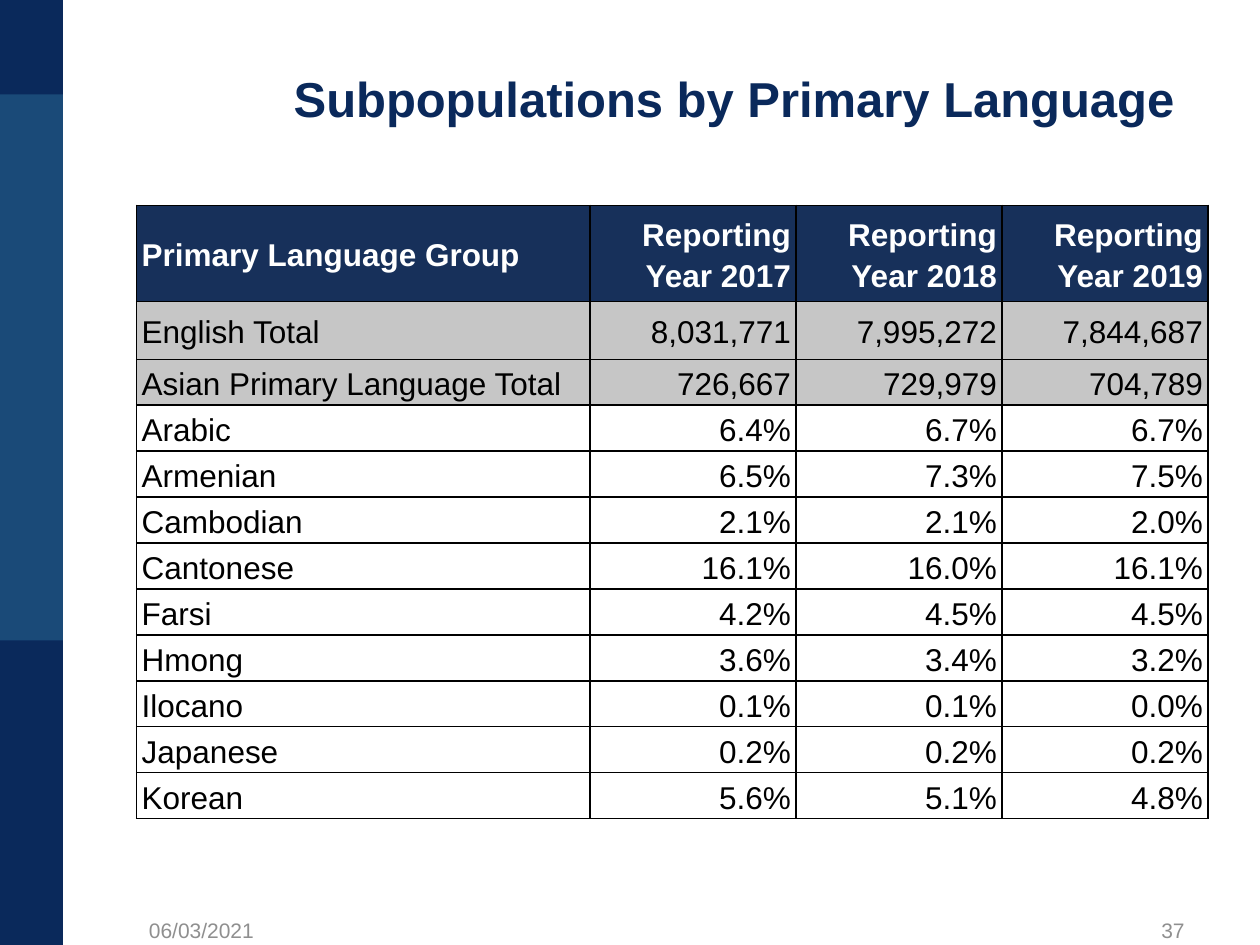
from dataclasses import dataclass

from lxml import etree
from pptx import Presentation
from pptx.dml.color import RGBColor
from pptx.enum.shapes import MSO_SHAPE
from pptx.enum.text import MSO_ANCHOR, MSO_AUTO_SIZE, PP_ALIGN
from pptx.oxml.ns import qn
from pptx.util import Pt

RECT = MSO_SHAPE.RECTANGLE
MIDDLE = MSO_ANCHOR.MIDDLE
NO_AUTOFIT = MSO_AUTO_SIZE.NONE
LEFT, CENTER, RIGHT = PP_ALIGN.LEFT, PP_ALIGN.CENTER, PP_ALIGN.RIGHT

NAVY = RGBColor(0x0A, 0x29, 0x5B)
BLUE = RGBColor(0x1A, 0x4A, 0x78)
HEADER_NAVY = RGBColor(0x17, 0x30, 0x5A)
TOTAL_GREY = RGBColor(0xC6, 0xC6, 0xC6)
FOOTER_GREY = RGBColor(0x8F, 0x8F, 0x8F)
WHITE = RGBColor(0xFF, 0xFF, 0xFF)
BLACK = RGBColor(0, 0, 0)


@dataclass
class Band:
    top: float
    height: float
    color: RGBColor


@dataclass
class Footer:
    text: str
    left: float
    align: PP_ALIGN


@dataclass
class RowStyle:
    height: float
    fill: RGBColor
    color: RGBColor = BLACK
    bold: bool = False


HEADER = RowStyle(54.8, HEADER_NAVY, WHITE, True)
ENGLISH = RowStyle(33.1, TOTAL_GREY)
TOTAL = RowStyle(26.25, TOTAL_GREY)
LANGUAGE = RowStyle(26.25, WHITE)

BAND_WIDTH = 36
BANDS = [Band(0, 540, BLUE), Band(0, 54, NAVY), Band(366, 174, NAVY)]
FOOTERS = [Footer("06/03/2021", 78, LEFT), Footer("37", 516, RIGHT)]

COLUMN_WIDTHS = [259.2] + [117.7] * 3
ROWS = [
    (HEADER, ["Primary Language Group"]
     + [f"Reporting Year {year}" for year in (2017, 2018, 2019)]),
    (ENGLISH, ["English Total", "8,031,771", "7,995,272", "7,844,687"]),
    (TOTAL, ["Asian Primary Language Total", "726,667", "729,979", "704,789"]),
    (LANGUAGE, ["Arabic", "6.4%", "6.7%", "6.7%"]),
    (LANGUAGE, ["Armenian", "6.5%", "7.3%", "7.5%"]),
    (LANGUAGE, ["Cambodian", "2.1%", "2.1%", "2.0%"]),
    (LANGUAGE, ["Cantonese", "16.1%", "16.0%", "16.1%"]),
    (LANGUAGE, ["Farsi", "4.2%", "4.5%", "4.5%"]),
    (LANGUAGE, ["Hmong", "3.6%", "3.4%", "3.2%"]),
    (LANGUAGE, ["Ilocano", "0.1%", "0.1%", "0.0%"]),
    (LANGUAGE, ["Japanese", "0.2%", "0.2%", "0.2%"]),
    (LANGUAGE, ["Korean", "5.6%", "5.1%", "4.8%"]),
]


def set_attributes(target, values: dict) -> None:
    for name, value in values.items():
        setattr(target, name, value)


def write_text(tf, text: str, size: float, color: RGBColor,
               align: PP_ALIGN, bold: bool = False) -> None:
    p = tf.paragraphs[0]
    p.alignment = align
    r = p.add_run()
    r.text = text
    set_attributes(r.font, {"name": "Arial", "size": Pt(size), "bold": bold})
    r.font.color.rgb = color


def add_band(s, band: Band) -> None:
    sp = s.shapes.add_shape(RECT, 0, Pt(band.top), Pt(BAND_WIDTH), Pt(band.height))
    sp.shadow.inherit = False
    sp.fill.solid()
    sp.fill.fore_color.rgb = band.color
    sp.line.fill.background()


def add_title(s, text: str) -> None:
    sp = s.shapes.title
    set_attributes(sp, {"left": Pt(144), "top": Pt(39.6),
                        "width": Pt(551), "height": Pt(32.4)})
    tf = sp.text_frame
    set_attributes(tf, {"word_wrap": True, "auto_size": NO_AUTOFIT,
                        "vertical_anchor": MIDDLE})
    write_text(tf, text, 28, NAVY, CENTER, True)


def add_footer(s, footer: Footer) -> None:
    tf = s.shapes.add_textbox(Pt(footer.left), Pt(517), Pt(168), Pt(28.8)).text_frame
    set_attributes(tf, {"word_wrap": True, "vertical_anchor": MIDDLE})
    write_text(tf, footer.text, 12, FOOTER_GREY, footer.align)


def add_borders(cell, color: RGBColor, width: float) -> None:
    """Outline all four sides; call before filling, as the schema puts lines first."""
    tc_pr = cell._tc.get_or_add_tcPr()
    for side in ("lnL", "lnR", "lnT", "lnB"):
        line = etree.SubElement(tc_pr, qn(f"a:{side}"), w=str(Pt(width)))
        fill = etree.SubElement(line, qn("a:solidFill"))
        etree.SubElement(fill, qn("a:srgbClr"), val=str(color))


def fill_cell(cell, text: str, style: RowStyle, align: PP_ALIGN) -> None:
    set_attributes(cell, {"margin_left": Pt(3), "margin_right": Pt(3),
                          "margin_top": 0, "margin_bottom": 0,
                          "vertical_anchor": MIDDLE})
    add_borders(cell, BLACK, 1)
    cell.fill.solid()
    cell.fill.fore_color.rgb = style.fill
    write_text(cell.text_frame, text, 18, style.color, align, style.bold)
    cell.text_frame.paragraphs[0].line_spacing = 1.15


def add_language_table(s) -> None:
    width = sum(COLUMN_WIDTHS)
    height = sum(style.height for style, _ in ROWS)
    table = s.shapes.add_table(len(ROWS), len(COLUMN_WIDTHS), Pt(78), Pt(117.4),
                               Pt(width), Pt(height)).table
    table.horz_banding = False
    for column, column_width in zip(table.columns, COLUMN_WIDTHS):
        column.width = Pt(column_width)
    for row, (style, texts) in zip(table.rows, ROWS):
        row.height = Pt(style.height)
        for i, (cell, text) in enumerate(zip(row.cells, texts)):
            fill_cell(cell, text, style, RIGHT if i else LEFT)


def main() -> None:
    prs = Presentation()
    set_attributes(prs, {"slide_width": Pt(720), "slide_height": Pt(540)})
    s = prs.slides.add_slide(prs.slide_layouts[5])
    for band in BANDS:
        add_band(s, band)
    add_title(s, "Subpopulations by Primary Language")
    add_language_table(s)
    for footer in FOOTERS:
        add_footer(s, footer)
    prs.save("out.pptx")


if __name__ == "__main__":
    main()
